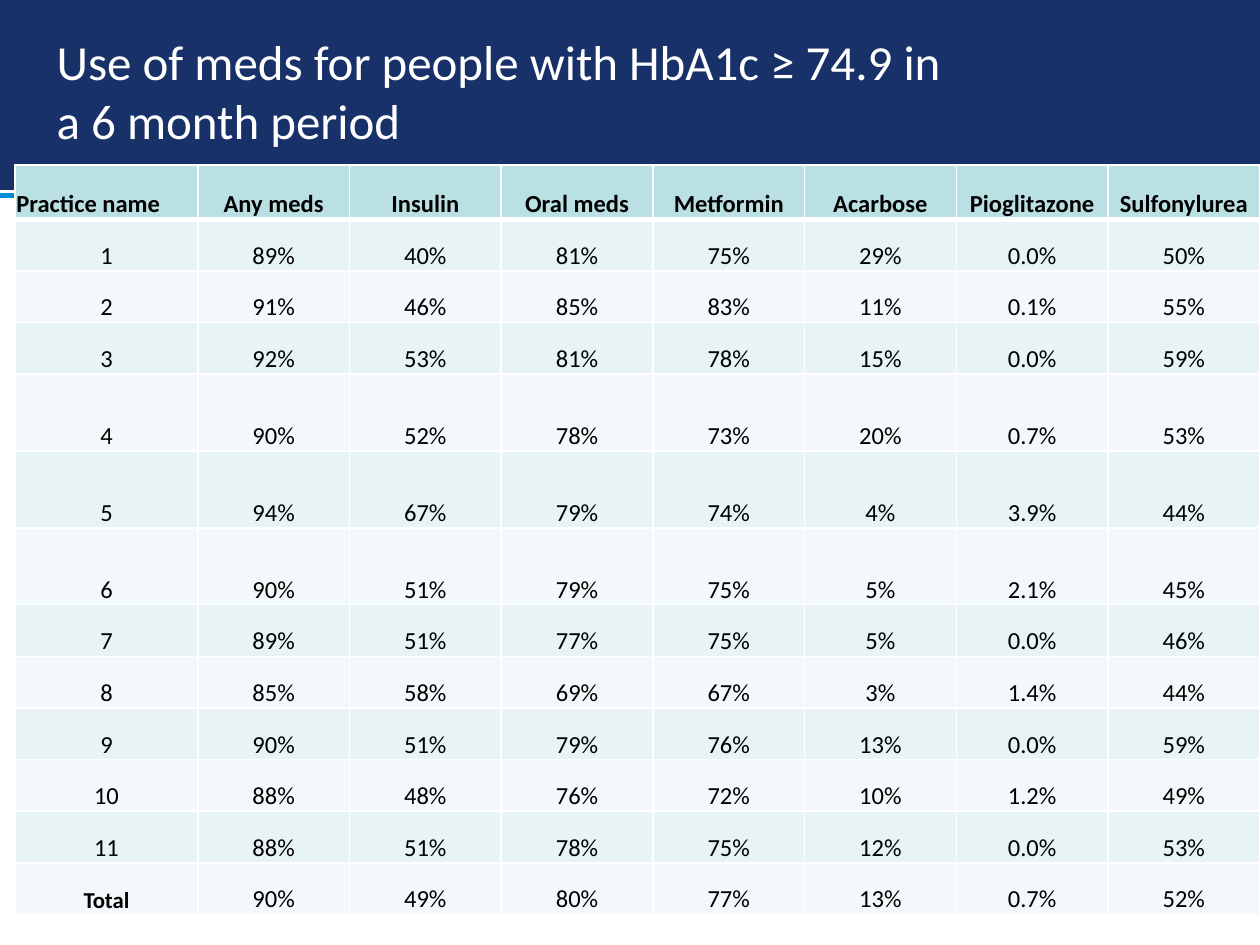
from dataclasses import dataclass

from pptx import Presentation
from pptx.dml.color import RGBColor
from pptx.enum.shapes import MSO_CONNECTOR, MSO_SHAPE
from pptx.enum.text import MSO_ANCHOR, PP_ALIGN
from pptx.oxml.ns import qn
from pptx.util import Inches, Pt
from lxml.etree import SubElement, Element


@dataclass(frozen=True)
class Theme:
    font: str = "Calibri"
    navy: str = "183169"
    blue: str = "008CD6"
    white: str = "FFFFFF"
    black: str = "000000"
    header_fill: str = "BBE0E3"
    band_fills: tuple[str, str] = ("E7F3F4", "F3F9FA")
    title_size: int = 28
    cell_size: int = 14
    total_size: int = 13
    thin: int = 1
    thick: int = 3


@dataclass(frozen=True)
class Box:
    left: float
    top: float
    width: float
    height: float

    def place(self) -> tuple[int, ...]:
        return tuple(Inches(n) for n in (self.left, self.top, self.width, self.height))


@dataclass(frozen=True)
class CellStyle:
    fill: str
    size: int
    bold: bool
    align: PP_ALIGN
    top_border: int
    bottom_border: int


THEME = Theme()
SLIDE = Box(0, 0, 10, 7.5)
BAND = Box(0, 0, SLIDE.width, 1.49)
RULE_TOP = 1.55
TITLE = Box(0.35, 0.28, 7.48, 0.87)
TABLE = Box(0.12, 1.31, SLIDE.width - 0.12, 5.93)
NAME_COLUMN = 1.45
HEADER_ROW, BODY_ROW, TALL_ROW = 0.43, 0.41, 0.61
TALL_PRACTICES = {"4", "5", "6"}

HEADERS = ("Practice name", "Any meds", "Insulin", "Oral meds", "Metformin",
           "Acarbose", "Pioglitazone", "Sulfonylurea")
PRACTICES = (
    ("1", "89%", "40%", "81%", "75%", "29%", "0.0%", "50%"),
    ("2", "91%", "46%", "85%", "83%", "11%", "0.1%", "55%"),
    ("3", "92%", "53%", "81%", "78%", "15%", "0.0%", "59%"),
    ("4", "90%", "52%", "78%", "73%", "20%", "0.7%", "53%"),
    ("5", "94%", "67%", "79%", "74%", "4%", "3.9%", "44%"),
    ("6", "90%", "51%", "79%", "75%", "5%", "2.1%", "45%"),
    ("7", "89%", "51%", "77%", "75%", "5%", "0.0%", "46%"),
    ("8", "85%", "58%", "69%", "67%", "3%", "1.4%", "44%"),
    ("9", "90%", "51%", "79%", "76%", "13%", "0.0%", "59%"),
    ("10", "88%", "48%", "76%", "72%", "10%", "1.2%", "49%"),
    ("11", "88%", "51%", "78%", "75%", "12%", "0.0%", "53%"),
    ("Total", "90%", "49%", "80%", "77%", "13%", "0.7%", "52%"),
)


def set_format(target, **values) -> None:
    for name, value in values.items():
        setattr(target, name, value)


def set_font(paragraph, size: int, color: str, bold: bool = False) -> None:
    font = paragraph.runs[0].font
    set_format(font, name=THEME.font, size=Pt(size), bold=bold)
    font.color.rgb = RGBColor.from_string(color)


def set_line(line, color: str) -> None:
    line.color.rgb = RGBColor.from_string(color)
    line.width = Pt(THEME.thick)


def add_banner(slide) -> None:
    rule = slide.shapes.add_connector(
        MSO_CONNECTOR.STRAIGHT, 0, Inches(RULE_TOP), Inches(SLIDE.width), Inches(RULE_TOP))
    set_line(rule.line, THEME.blue)
    SubElement(rule._element.spPr, qn("a:effectLst"))

    band = slide.shapes.add_shape(MSO_SHAPE.RECTANGLE, *BAND.place())
    band.shadow.inherit = False
    band.fill.solid()
    band.fill.fore_color.rgb = RGBColor.from_string(THEME.navy)
    set_line(band.line, THEME.navy)


def add_title(slide, text: str) -> None:
    """Fill the title placeholder and lift it above the banner."""
    title = slide.shapes.title
    left, top, width, height = TITLE.place()
    set_format(title, left=left, top=top, width=width, height=height)
    title.text_frame.text = text
    set_format(title.text_frame, vertical_anchor=MSO_ANCHOR.MIDDLE, word_wrap=True)
    paragraph = title.text_frame.paragraphs[0]
    paragraph.alignment = PP_ALIGN.LEFT
    set_font(paragraph, THEME.title_size, THEME.white)
    slide.shapes._spTree.append(title._element)


def set_borders(cell, top: int, bottom: int) -> None:
    """Borders must come before the fill in the cell properties."""
    widths = {"a:lnL": THEME.thin, "a:lnR": THEME.thin, "a:lnT": top, "a:lnB": bottom}
    properties = cell._tc.get_or_add_tcPr()
    for index, (tag, width) in enumerate(widths.items()):
        border = Element(qn(tag), w=str(Pt(width)))
        fill = SubElement(border, qn("a:solidFill"))
        SubElement(fill, qn("a:srgbClr"), val=THEME.white)
        properties.insert(index, border)


def fill_cell(cell, text: str, style: CellStyle) -> None:
    cell.text = text
    set_format(cell, vertical_anchor=MSO_ANCHOR.BOTTOM, margin_left=Inches(0.01),
               margin_top=Inches(0.01), margin_right=Inches(0.01), margin_bottom=0)
    cell.fill.solid()
    cell.fill.fore_color.rgb = RGBColor.from_string(style.fill)
    set_borders(cell, style.top_border, style.bottom_border)
    paragraph = cell.text_frame.paragraphs[0]
    paragraph.alignment = style.align
    set_font(paragraph, style.size, THEME.black, style.bold)


def style_for(row: int, column: int, text: str) -> CellStyle:
    header, total = row == 0, text == "Total"
    return CellStyle(
        fill=THEME.header_fill if header else THEME.band_fills[(row - 1) % 2],
        size=THEME.total_size if total else THEME.cell_size,
        bold=header or total,
        align=PP_ALIGN.LEFT if header and column == 0 else PP_ALIGN.CENTER,
        top_border=THEME.thick if row == 1 else THEME.thin,
        bottom_border=THEME.thick if header else THEME.thin,
    )


def row_height(row: int, name: str) -> float:
    if row == 0:
        return HEADER_ROW
    return TALL_ROW if name in TALL_PRACTICES else BODY_ROW


def add_medication_table(slide) -> None:
    rows = (HEADERS, *PRACTICES)
    table = slide.shapes.add_table(len(rows), len(HEADERS), *TABLE.place()).table
    value_column = (TABLE.width - NAME_COLUMN) / (len(HEADERS) - 1)
    for index, column in enumerate(table.columns):
        column.width = Inches(value_column if index else NAME_COLUMN)
    for row, texts in enumerate(rows):
        table.rows[row].height = Inches(row_height(row, texts[0]))
        for column, text in enumerate(texts):
            fill_cell(table.cell(row, column), text, style_for(row, column, text))


def main() -> None:
    presentation = Presentation()
    set_format(presentation, slide_width=Inches(SLIDE.width),
               slide_height=Inches(SLIDE.height))
    slide = presentation.slides.add_slide(presentation.slide_layouts[5])
    add_banner(slide)
    add_title(slide, "Use of meds for people with HbA1c ≥ 74.9 in a 6 month period")
    add_medication_table(slide)
    presentation.save("out.pptx")


if __name__ == "__main__":
    main()
